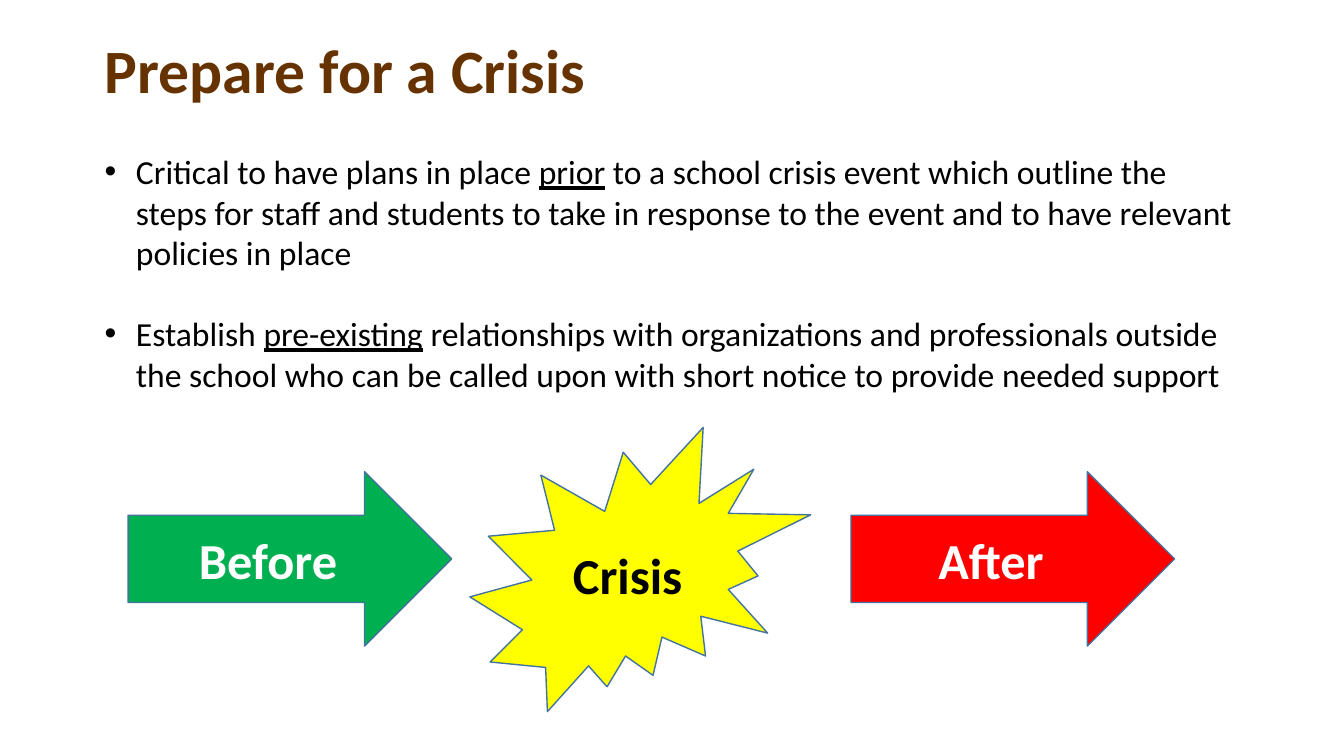
from lxml import etree
from pptx import Presentation
from pptx.dml.color import RGBColor
from pptx.enum.shapes import MSO_SHAPE
from pptx.enum.text import MSO_ANCHOR, MSO_AUTO_SIZE, PP_ALIGN
from pptx.oxml.ns import qn
from pptx.util import Inches, Pt

ARROW = MSO_SHAPE.RIGHT_ARROW
BURST = MSO_SHAPE.EXPLOSION2
LEFT, CENTER = PP_ALIGN.LEFT, PP_ALIGN.CENTER
TOP, MIDDLE = MSO_ANCHOR.TOP, MSO_ANCHOR.MIDDLE

SLIDE_WIDTH, SLIDE_HEIGHT = 13.33, 7.5
MARGIN = 0.94
TITLE_HEIGHT = 1.45
ARROW_TOP, ARROW_SIZE = 4.68, (3.21, 1.73)
FONT = "Calibri"
COLORS = {
    "title": "663300",
    "text": "000000",
    "light": "FFFFFF",
    "before": "00B050",
    "crisis": "FFFF00",
    "after": "FF0000",
    "outline": "43739E",
}

# Each point is a list of (words, underlined) pieces.
POINTS = [
    [
        ("Critical to have plans in place ", False),
        ("prior", True),
        (" to a school crisis event which outline the steps for staff and "
         "students to take in response to the event and to have relevant "
         "policies in place", False),
    ],
    [
        ("Establish ", False),
        ("pre-existing", True),
        (" relationships with organizations and professionals outside the "
         "school who can be called upon with short notice to provide needed "
         "support", False),
    ],
]


def rgb(name):
    return RGBColor.from_string(COLORS[name])


def write(paragraph, text, size, color="text", bold=False, underline=False,
          align=LEFT):
    paragraph.alignment = align
    run = paragraph.add_run()
    run.text = text
    font = run.font
    font.name, font.size = FONT, Pt(size)
    font.bold, font.underline = bold, underline
    font.color.rgb = rgb(color)


def set_frame(frame, anchor):
    frame.word_wrap = True
    frame.auto_size = MSO_AUTO_SIZE.NONE
    frame.vertical_anchor = anchor


def add_bullet(paragraph, indent=0.31):
    properties = paragraph._p.get_or_add_pPr()
    properties.set("marL", str(Inches(indent)))
    properties.set("indent", str(-Inches(indent)))
    etree.SubElement(properties, qn("a:buFont")).set("typeface", "Arial")
    etree.SubElement(properties, qn("a:buChar")).set("char", "•")


def add_title(slide, text):
    title = slide.shapes.title
    title.left, title.top = Inches(MARGIN), 0
    title.width, title.height = Inches(12.17), Inches(TITLE_HEIGHT)
    set_frame(title.text_frame, MIDDLE)
    heading = title.text_frame.paragraphs[0]
    heading.line_spacing = 0.9
    write(heading, text, 44, color="title", bold=True)


def add_points(slide, points, size=24, gap=29.3):
    body = slide.shapes.add_textbox(
        Inches(MARGIN), Inches(TITLE_HEIGHT), Inches(11.5), Inches(2.52))
    frame = body.text_frame
    set_frame(frame, TOP)
    for index, pieces in enumerate(points):
        paragraph = frame.add_paragraph() if index else frame.paragraphs[0]
        paragraph.space_before = Pt(gap if index else 0)
        add_bullet(paragraph)
        for words, underlined in pieces:
            write(paragraph, words, size, underline=underlined)


def add_stage(slide, preset, label, position, size, fill, color):
    stage = slide.shapes.add_shape(
        preset, *(Inches(length) for length in (*position, *size)))
    stage.shadow.inherit = False
    stage.fill.solid()
    stage.fill.fore_color.rgb = rgb(fill)
    stage.line.color.rgb = rgb("outline")
    stage.line.width = Pt(1)
    set_frame(stage.text_frame, MIDDLE)
    write(stage.text_frame.paragraphs[0], label, 36, color=color, bold=True,
          align=CENTER)


def main():
    deck = Presentation()
    deck.slide_width = Inches(SLIDE_WIDTH)
    deck.slide_height = Inches(SLIDE_HEIGHT)
    slide = deck.slides.add_slide(deck.slide_layouts[5])

    add_title(slide, "Prepare for a Crisis")
    add_points(slide, POINTS)
    for label, left, fill in (("Before", 1.27, "before"),
                              ("After", 8.44, "after")):
        add_stage(slide, ARROW, label, (left, ARROW_TOP), ARROW_SIZE,
                  fill, "light")
    add_stage(slide, BURST, "Crisis", (4.66, 4.24), (3.38, 2.82),
              "crisis", "text")

    deck.save("out.pptx")


if __name__ == "__main__":
    main()
